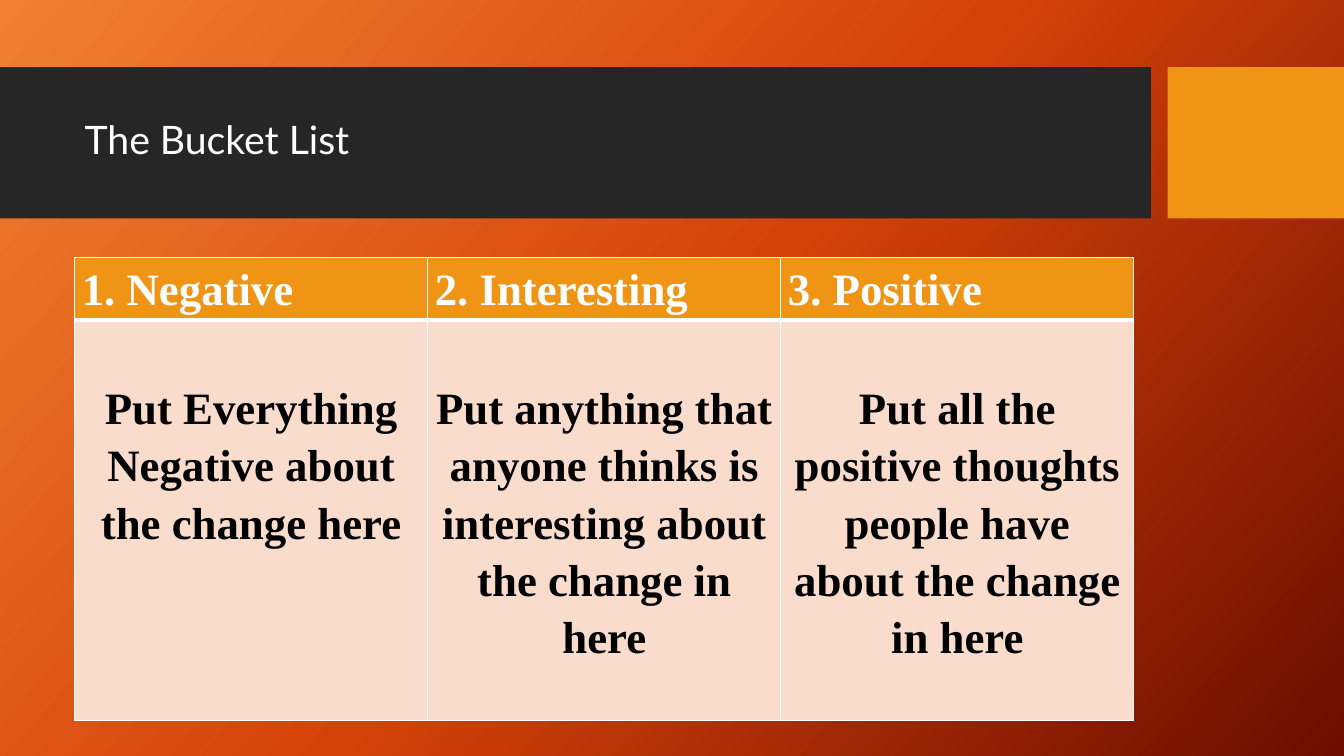
from copy import deepcopy

from pptx import Presentation
from pptx import util as u
from pptx.dml.color import RGBColor
from pptx.enum import shapes, text
from pptx.oxml import parse_xml
from pptx.oxml.ns import nsdecls, qn


def hue(code):
    return RGBColor.from_string(code)


def write(frame, words, font, size, color, bold=False, align="LEFT", lead=1.0):
    para = frame.paragraphs[0]
    para.alignment = getattr(text.PP_ALIGN, align)
    para.line_spacing = lead
    run = para.add_run()
    run.text = words
    run.font.name = font
    run.font.size = u.Pt(size)
    run.font.bold = bold
    run.font.color.rgb = hue(color)


class Deck:
    """Holds the style and current slide on a grid of 160 columns by 90 rows."""

    dark, gold, pale, white, black = "262626", "F09415", "F9DCCC", "FFFFFF", "000000"
    head, body = "Lato", "Times New Roman"
    cols, rows = 160, 90

    def __init__(self):
        self.prs = Presentation()
        self.prs.slide_width = u.Inches(13.33)
        self.prs.slide_height = u.Inches(7.5)
        self.slide = self.prs.slides.add_slide(self.prs.slide_layouts[6])

    def wide(self, n):
        return u.Emu(round(self.prs.slide_width * n / self.cols))

    def high(self, n):
        return u.Emu(round(self.prs.slide_height * n / self.rows))

    def box(self, x, y, w, h):
        return self.wide(x), self.high(y), self.wide(w), self.high(h)

    def ground(self, colors, angle):
        fill = self.slide.background.fill
        fill.gradient()
        fill.gradient_angle = 360 - angle
        stops = next(self.slide.element.iter(qn("a:gsLst")))
        while len(stops) < len(colors):
            stops.append(deepcopy(stops[0]))
        for i, (stop, color) in enumerate(zip(fill.gradient_stops, colors)):
            stop.position = i / (len(colors) - 1)
            stop.color.rgb = hue(color)

    def block(self, *area, color):
        rect = self.slide.shapes.add_shape(shapes.MSO_SHAPE.RECTANGLE, *self.box(*area))
        rect.shadow.inherit = False
        rect.fill.solid()
        rect.fill.fore_color.rgb = hue(color)
        rect.line.fill.background()

    def title(self, *area, words):
        frame = self.slide.shapes.add_textbox(*self.box(*area)).text_frame
        frame.word_wrap = True
        frame.vertical_anchor = text.MSO_ANCHOR.MIDDLE
        write(frame, words, self.head, 28, self.white, lead=0.9)

    def edge(self, cell, **sides):
        for side in "LRTB":
            cell._tc.get_or_add_tcPr().append(parse_xml(
                f'<a:ln{side} {nsdecls("a")} w="{u.Pt(sides.get(side, 1))}"><a:solidFill>'
                f'<a:srgbClr val="{self.white}"/></a:solidFill></a:ln{side}>'))

    def cell(self, cell, words, fill, color, align, top, **sides):
        self.edge(cell, **sides)
        cell.fill.solid()
        cell.fill.fore_color.rgb = hue(fill)
        cell.margin_left = cell.margin_right = u.Inches(0.07)
        cell.margin_top, cell.margin_bottom = self.high(top), 0
        write(cell.text_frame, words, self.body, 32, color, True, align, 1.15)

    def table(self, x, y, w, tall, pairs):
        grid = self.slide.shapes.add_table(
            len(tall), len(pairs), *self.box(x, y, w, sum(tall))).table
        for row, h in zip(grid.rows, tall):
            row.height = self.high(h)
        for i, (name, note) in enumerate(pairs):
            grid.columns[i].width = self.wide(w / len(pairs))
            self.cell(grid.cell(0, i), name, self.gold, self.white, "LEFT", 0, B=3)
            self.cell(grid.cell(1, i), note, self.pale, self.black, "CENTER", 6.85, T=3)


def main():
    deck = Deck()
    deck.ground(["F18031", "D54209", "6A0D00"], 42)
    deck.block(0, 8, 137, 18, color=deck.dark)
    deck.block(139, 8, 21, 18, color=deck.gold)
    deck.title(8.9, 9.8, 126.1, 14.2, words="The Bucket List")
    deck.table(8.9, 30.7, 126.1, [6.7, 47.7], [
        ("1. Negative", "Put Everything Negative about the change here"),
        ("2. Interesting",
         "Put anything that anyone thinks is interesting about the change in here"),
        ("3. Positive",
         "Put all the positive thoughts people have about the change in here"),
    ])
    deck.prs.save("out.pptx")


if __name__ == "__main__":
    main()
